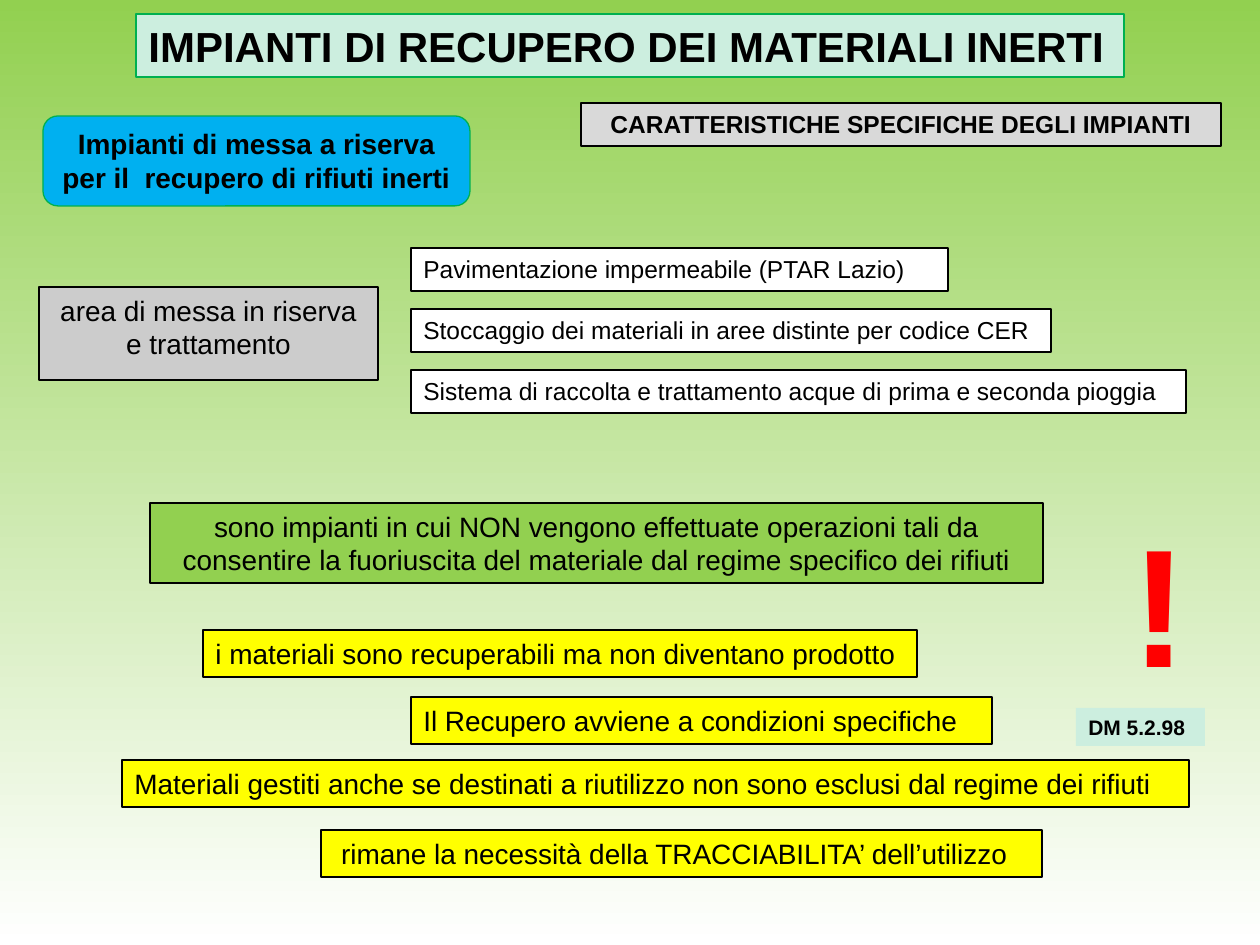
from pptx import Presentation
from pptx import util as u
from pptx.dml.color import RGBColor
from pptx.enum import shapes, text

PX = u.Inches(1) / 126
COLORS = {
    "black": "000000", "white": "FFFFFF", "green": "92D050", "edge": "00B050",
    "mint": "CCEEDF", "blue": "00B0F0", "silver": "D9D9D9", "gray": "CCCCCC",
    "yellow": "FFFF00", "red": "FF0000",
}
RECT = shapes.MSO_SHAPE.RECTANGLE
ROUND = shapes.MSO_SHAPE.ROUNDED_RECTANGLE
LEFT, CENTER = text.PP_ALIGN.LEFT, text.PP_ALIGN.CENTER


def color(name):
    return RGBColor.from_string(COLORS[name])


def add_label(page, words, place, fill, size, line="black", bold=False,
              align=LEFT, kind=RECT, ink="black"):
    """Add a filled box with top-anchored text; place is left, top, width, height in px."""
    box = page.shapes.add_shape(kind, *(round(n * PX) for n in place))
    box.shadow.inherit = False
    if fill:
        box.fill.solid()
        box.fill.fore_color.rgb = color(fill)
    else:
        box.fill.background()
    if line:
        box.line.color.rgb = color(line)
        box.line.width = u.Pt(0.75)
    else:
        box.line.fill.background()
    frame = box.text_frame
    frame.word_wrap = True
    frame.vertical_anchor = text.MSO_ANCHOR.TOP
    para = frame.paragraphs[0]
    para.alignment = align
    span = para.add_run()
    span.text = words
    for name, value in {"name": "Arial", "size": u.Pt(size), "bold": bold}.items():
        setattr(span.font, name, value)
    span.font.color.rgb = color(ink)


deck = Presentation()
deck.slide_width, deck.slide_height = u.Inches(10), u.Inches(7.5)
page = deck.slides.add_slide(deck.slide_layouts[6])

backdrop = page.background.fill
backdrop.gradient()
backdrop.gradient_angle = 270
for stop, name in zip(backdrop.gradient_stops, ("green", "white")):
    stop.color.rgb = color(name)

# Headings
add_label(page, "IMPIANTI DI RECUPERO DEI MATERIALI INERTI", (136, 14, 988, 63),
          "mint", 24, line="edge", bold=True)
add_label(page, "CARATTERISTICHE SPECIFICHE DEGLI IMPIANTI", (581, 103, 640, 43),
          "silver", 14, bold=True, align=CENTER)
add_label(page, "Impianti di messa a riserva per il  recupero di rifiuti inerti",
          (43, 116, 427, 90), "blue", 16, line="edge", bold=True, align=CENTER, kind=ROUND)

# Storage area and its requirements
add_label(page, "area di messa in riserva e trattamento", (39, 287, 339, 93),
          "gray", 16, align=CENTER)
requirements = [
    ("Pavimentazione impermeabile (PTAR Lazio)", 537),
    ("Stoccaggio dei materiali in aree distinte per codice CER", 640),
    ("Sistema di raccolta e trattamento acque di prima e seconda pioggia", 775),
]
for row, (words, width) in enumerate(requirements):
    add_label(page, words, (411, 248 + 61 * row, width, 43), "white", 14)

# Definition and consequences
add_label(page, "sono impianti in cui NON vengono effettuate operazioni tali da "
          "consentire la fuoriuscita del materiale dal regime specifico dei rifiuti",
          (150, 503, 893, 80), "green", 16, align=CENTER)
consequences = [
    ("i materiali sono recuperabili ma non diventano prodotto", 203, 630, 714),
    ("Il Recupero avviene a condizioni specifiche", 411, 697, 581),
    ("Materiali gestiti anche se destinati a riutilizzo non sono esclusi "
     "dal regime dei rifiuti", 122, 760, 1067),
    (" rimane la necessità della TRACCIABILITA’ dell’utilizzo", 321, 830, 721),
]
for words, left, top, width in consequences:
    add_label(page, words, (left, top, width, 47), "yellow", 16)

# Warning and legal reference
add_label(page, "!", (1119, 493, 69, 217), None, 96, line=None, bold=True, ink="red")
add_label(page, "DM 5.2.98", (1076, 708, 129, 38), "mint", 12, line=None, bold=True)

deck.save("out.pptx")
